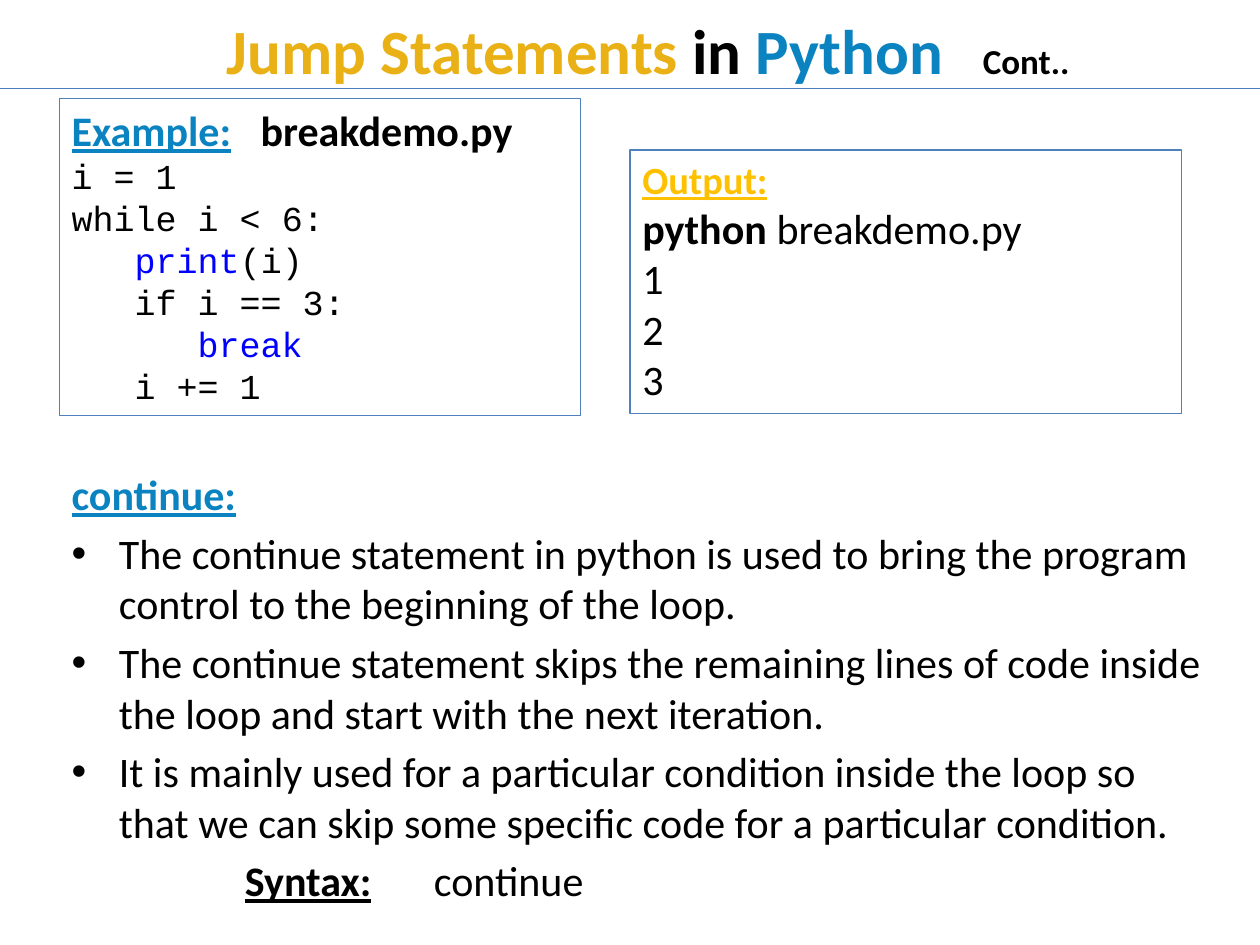
"""Build the slide on jump statements in Python: break demo and continue."""
from dataclasses import dataclass

from lxml.etree import SubElement
from pptx import Presentation
from pptx.dml.color import RGBColor
from pptx.enum.shapes import MSO_CONNECTOR, MSO_SHAPE
from pptx.enum.text import MSO_ANCHOR, PP_ALIGN
from pptx.oxml.ns import qn
from pptx.util import Inches, Pt

COLUMNS, ROWS = 100, 75
COLORS = {
    "gold": "E9B115", "blue": "0A83C0", "black": "000000", "rule": "4B7EBC",
    "border": "4F81BD", "keyword": "0000FF", "amber": "FFC000",
}
BODY = {"name": "Calibri", "size": Pt(24)}
BOLD = BODY | {"bold": True}
HEADING = BOLD | {"underline": True}
TITLE = BOLD | {"size": Pt(36)}
CODE = {"name": "Courier New", "size": Pt(20)}


@dataclass(frozen=True)
class Run:
    text: str
    format: dict
    color: str = "black"


@dataclass(frozen=True)
class Line:
    runs: tuple[Run, ...]
    indent: float = 0
    bullet: bool = False
    tab: float = 0
    space_before: float = 0


@dataclass(frozen=True)
class Panel:
    left: float
    top: float
    width: float
    height: float
    lines: tuple[Line, ...]
    bordered: bool = False
    anchor: MSO_ANCHOR = MSO_ANCHOR.TOP
    margin: float = 1


def rgb(color: str) -> RGBColor:
    return RGBColor.from_string(COLORS[color])


def draw_line(paragraph, line: Line, cell: int) -> None:
    paragraph.alignment = PP_ALIGN.LEFT
    paragraph.space_before = Pt(line.space_before)
    properties = paragraph._p.get_or_add_pPr()
    properties.set("marL", str(round(line.indent * cell)))
    properties.set("indent", str(round(-line.indent * cell) if line.bullet else 0))
    if line.bullet:
        SubElement(properties, qn("a:buFont"), typeface="Arial")
        SubElement(properties, qn("a:buChar"), char="•")
    if line.tab:
        tabs = SubElement(properties, qn("a:tabLst"))
        SubElement(tabs, qn("a:tab"), pos=str(round(line.tab * cell)), algn="l")
    for item in line.runs:
        run = paragraph.add_run()
        run.text = item.text
        for attribute, value in item.format.items():
            setattr(run.font, attribute, value)
        run.font.color.rgb = rgb(item.color)


def draw_panel(slide, panel: Panel, cell: int) -> None:
    place = [round(value * cell) for value in (panel.left, panel.top, panel.width, panel.height)]
    if panel.bordered:
        shape = slide.shapes.add_shape(MSO_SHAPE.RECTANGLE, *place)
        shape.shadow.inherit = False
        shape.fill.background()
        shape.line.color.rgb = rgb("border")
        shape.line.width = Pt(0.75)
    else:
        shape = slide.shapes.add_textbox(*place)
    frame = shape.text_frame
    settings = {"word_wrap": True, "vertical_anchor": panel.anchor,
                "margin_left": round(panel.margin * cell)}
    for attribute, value in settings.items():
        setattr(frame, attribute, value)
    for index, line in enumerate(panel.lines):
        paragraph = frame.add_paragraph() if index else frame.paragraphs[0]
        draw_line(paragraph, line, cell)


def draw_rule(slide, row: float, cell: int) -> None:
    height = round(row * cell)
    rule = slide.shapes.add_connector(MSO_CONNECTOR.STRAIGHT, 0, height, COLUMNS * cell, height)
    rule.line.color.rgb = rgb("rule")
    rule.line.width = Pt(0.75)
    SubElement(rule._element.spPr, qn("a:effectLst"))


def code(*parts: tuple[str, str]) -> Line:
    return Line(tuple(Run(text, CODE, color) for text, color in parts))


def bullet(text: str) -> Line:
    return Line((Run(text, BODY),), indent=3.75, bullet=True, space_before=4.8)


PANELS = (
    Panel(5.5, 0, 90, 7.8, (
        Line((Run("Jump Statements ", TITLE, "gold"), Run("in ", TITLE),
              Run("Python", TITLE, "blue"), Run("\tCont..", BOLD | {"size": Pt(20)})), tab=68.1),
    ), anchor=MSO_ANCHOR.MIDDLE, margin=12.5),
    Panel(4.7, 36.7, 92.2, 35.9, (
        Line((Run("continue:", HEADING, "blue"),)),
        bullet("The continue statement in python is used to bring the program "
               "control to the beginning of the loop."),
        bullet("The continue statement skips the remaining lines of code inside "
               "the loop and start with the next iteration."),
        bullet("It is mainly used for a particular condition inside the loop so "
               "that we can skip some specific code for a particular condition."),
        Line((Run("Syntax:", HEADING), Run("\tcontinue", BODY)), indent=13.75, space_before=4.8),
    )),
    Panel(4.7, 7.8, 41.4, 25.2, (
        Line((Run("Example:", HEADING, "blue"), Run("\tbreakdemo.py", BOLD)), tab=15.7),
        code(("i = 1", "black")),
        code(("while i < 6:", "black")),
        code(("\tprint", "keyword"), ("(i)", "black")),
        code(("\tif i == 3:", "black")),
        code(("\t\tbreak", "keyword")),
        code(("\ti += 1", "black")),
    ), bordered=True),
    Panel(50, 11.9, 43.8, 20.9, (
        Line((Run("Output:", HEADING | {"size": Pt(22)}, "amber"),)),
        Line((Run("python", BOLD), Run(" breakdemo.py", BODY))),
        *(Line((Run(number, BODY),)) for number in "123"),
    ), bordered=True),
)


def main() -> None:
    presentation = Presentation()
    presentation.slide_width = Inches(10)
    presentation.slide_height = Inches(7.5)
    cell = presentation.slide_height // ROWS
    slide = presentation.slides.add_slide(presentation.slide_layouts[6])
    for panel in PANELS:
        draw_panel(slide, panel, cell)
    draw_rule(slide, 7, cell)
    presentation.save("out.pptx")


if __name__ == "__main__":
    main()
